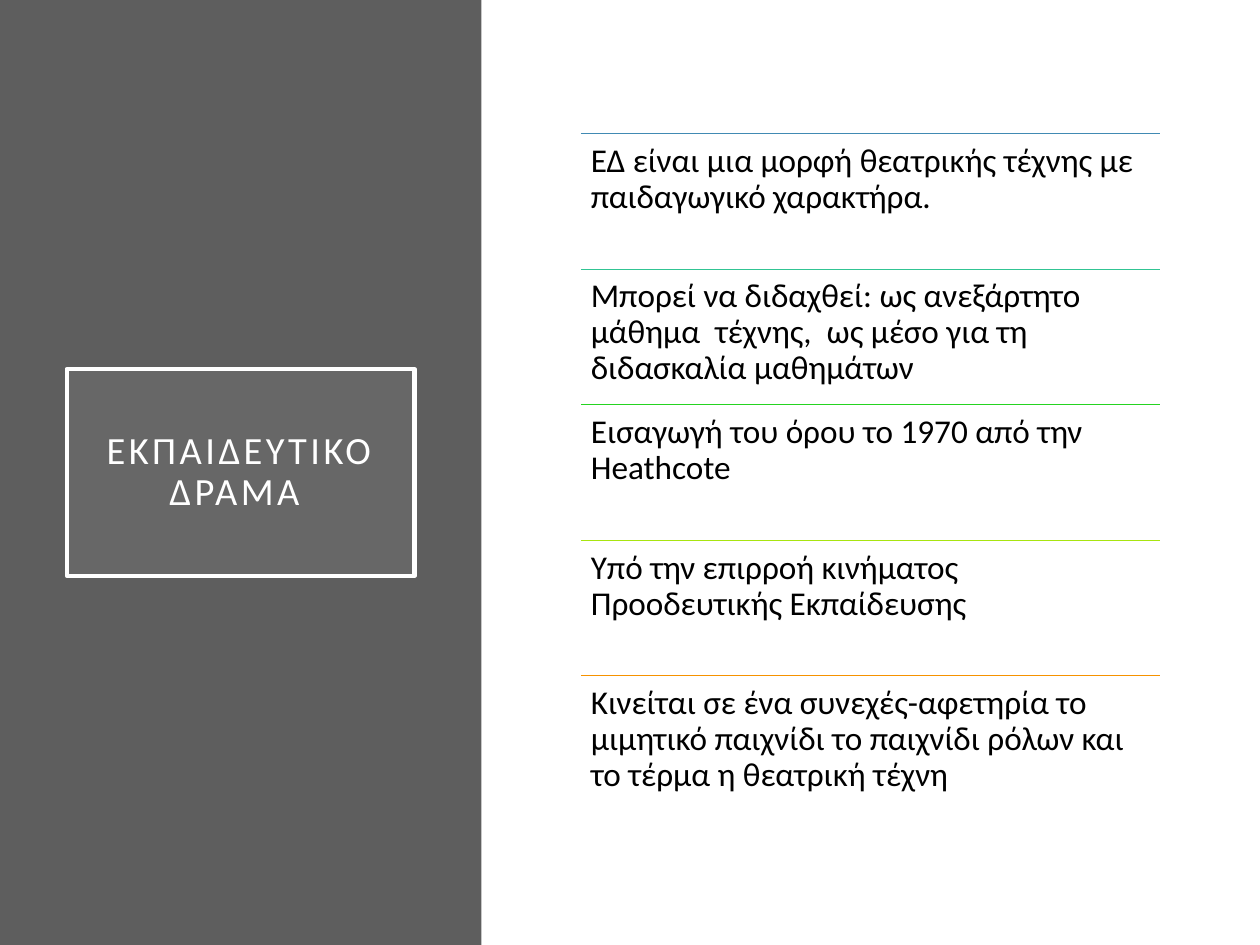
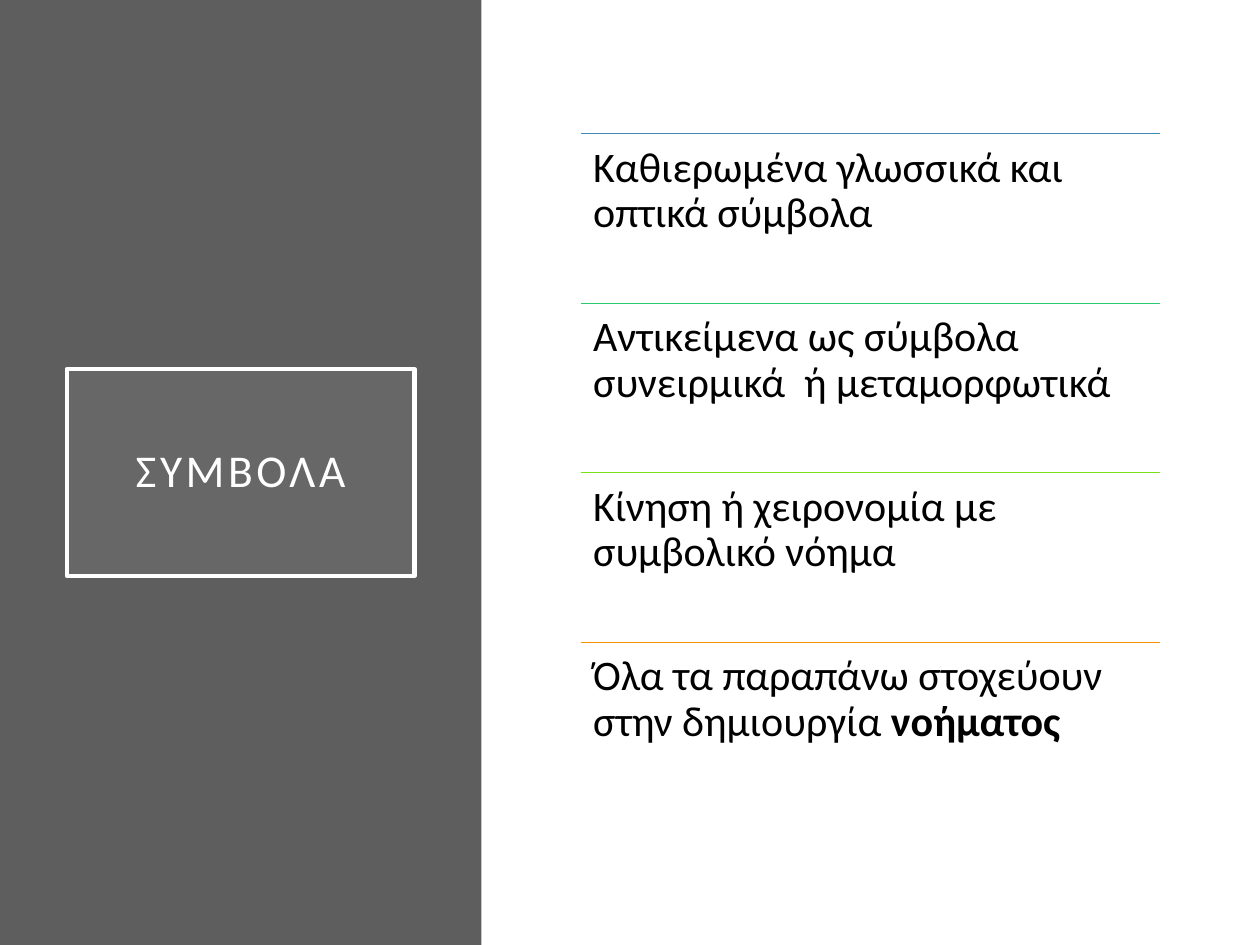
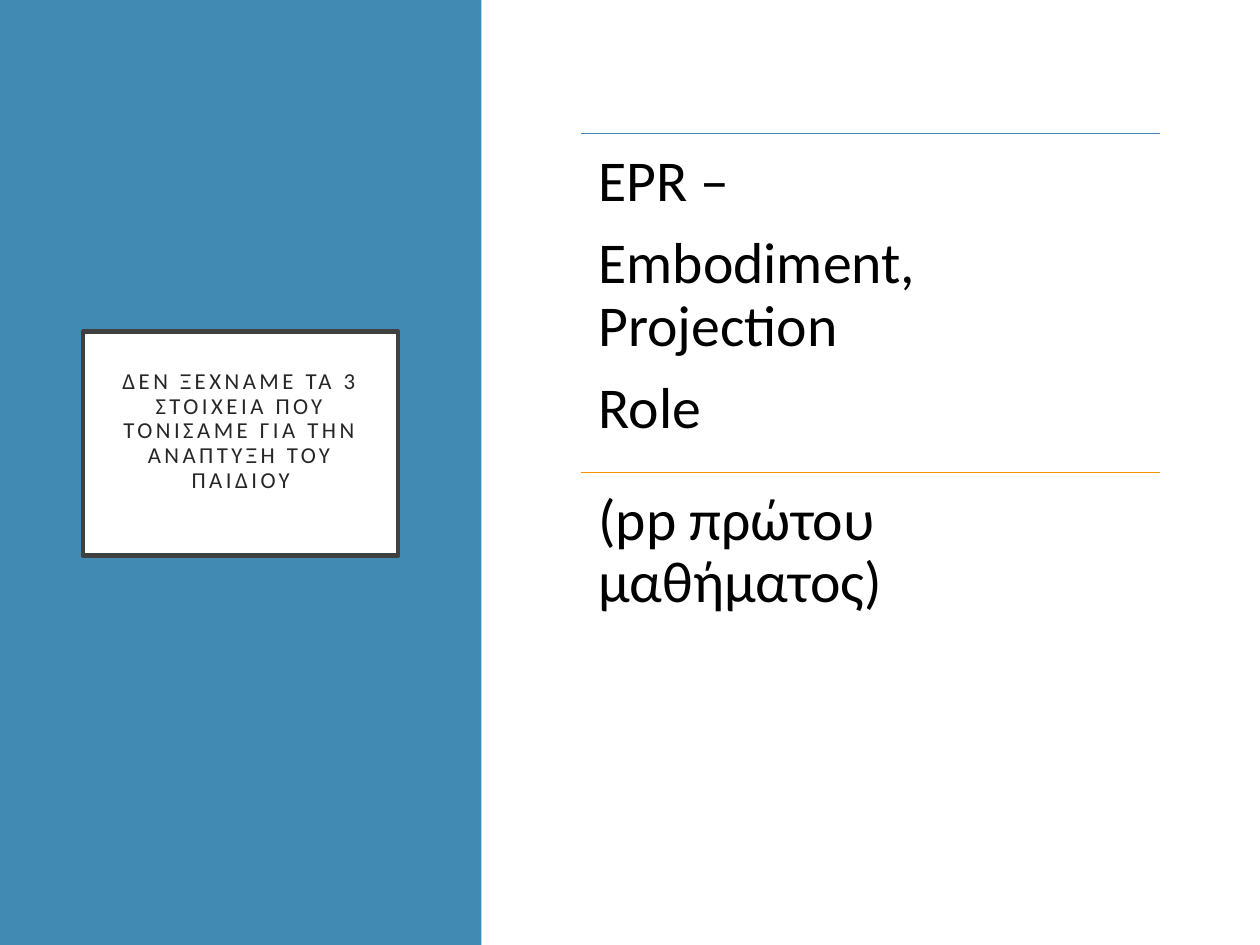
"""Build three slides that pair a framed title on a side band with ruled rows of text."""
from dataclasses import dataclass
from typing import Any

from lxml import etree
from pptx import Presentation
from pptx.dml.color import RGBColor
from pptx.enum.shapes import MSO_CONNECTOR, MSO_SHAPE
from pptx.enum.text import MSO_ANCHOR, MSO_AUTO_SIZE, PP_ALIGN
from pptx.oxml.ns import qn
from pptx.util import Emu, Pt

RECTANGLE = MSO_SHAPE.RECTANGLE
STRAIGHT = MSO_CONNECTOR.STRAIGHT
TOP = MSO_ANCHOR.TOP
MIDDLE = MSO_ANCHOR.MIDDLE
NO_AUTOFIT = MSO_AUTO_SIZE.NONE
LEFT = PP_ALIGN.LEFT
CENTER = PP_ALIGN.CENTER

EMU_PER_PX = 9144
SLIDE_WIDTH, SLIDE_HEIGHT = 1000, 750
BAND_WIDTH = 382
ROWS_LEFT, ROWS_TOP, ROWS_WIDTH, ROWS_HEIGHT = 461, 106, 460, 538
TITLE_ONLY_LAYOUT = 5


@dataclass(frozen=True)
class Theme:
    """Hold the colours, type sizes and line settings of the deck."""

    font: str = "Calibri"
    white: str = "FFFFFF"
    black: str = "000000"
    band: str = "5E5E5E"
    frame_tint: str = "9E9E9E"
    frame_dark: str = "404040"
    title_dark: str = "262626"
    blue: str = "418AB3"
    teal: str = "31C493"
    mint: str = "2BC970"
    green: str = "25D421"
    grass: str = "78E016"
    lime: str = "A8E510"
    orange: str = "F69200"
    title_long: int = 22
    title_short: int = 26
    title_small: int = 13
    row_small: int = 19
    row_medium: int = 24
    row_large: int = 33
    frame_line: float = 2.5
    rule_line: float = 0.5
    line_spacing: float = 0.9
    space_after: float = 0.35
    tracking: int = 200


THEME = Theme()


@dataclass(frozen=True)
class Box:
    """Give a place and size in px."""

    left: int
    top: int
    width: int
    height: int

    def emu(self) -> tuple[Emu, ...]:
        """Return the box lengths in EMU."""
        return tuple(map(px, (self.left, self.top, self.width, self.height)))


@dataclass(frozen=True)
class TitleStyle:
    """Describe the title frame and its lettering."""

    box: Box
    insets: tuple[int, int, int, int]
    fill: str
    opacity: int
    line: str
    color: str


@dataclass(frozen=True)
class Row:
    """Describe one ruled row of text, with an optional bold ending."""

    accent: str
    paragraphs: tuple[str, ...]
    bold_ending: str = ""


@dataclass(frozen=True)
class Page:
    """Describe one slide."""

    title: str
    title_size: int
    title_style: TitleStyle
    background: str
    panel: Box
    panel_color: str
    row_size: int
    row_inset: int
    rows: tuple[Row, ...]


ON_GREY = TitleStyle(Box(53, 293, 276, 164), (20, 20, 20, 20),
                     THEME.frame_tint, 15, THEME.white, THEME.white)
ON_BLUE = TitleStyle(Box(66, 263, 250, 178), (30, 20, 30, 39),
                     THEME.white, 100, THEME.frame_dark, THEME.title_dark)
SIDE_BAND = Box(0, 0, BAND_WIDTH, SLIDE_HEIGHT)
CONTENT_PANEL = Box(BAND_WIDTH, 0, SLIDE_WIDTH - BAND_WIDTH, SLIDE_HEIGHT)

PAGES = (
    Page(
        "Εκπαιδευτικο Δραμα ", THEME.title_long, ON_GREY,
        THEME.white, SIDE_BAND, THEME.band, THEME.row_small, 8,
        (
            Row(THEME.blue, ("ΕΔ είναι μια μορφή θεατρικής τέχνης με παιδαγωγικό χαρακτήρα.",)),
            Row(THEME.teal, ("Μπορεί να διδαχθεί: ως ανεξάρτητο μάθημα  τέχνης,  "
                             "ως μέσο για τη διδασκαλία μαθημάτων",)),
            Row(THEME.green, ("Εισαγωγή του όρου το 1970 από την Heathcote",)),
            Row(THEME.lime, ("Υπό την επιρροή κινήματος Προοδευτικής Εκπαίδευσης",)),
            Row(THEME.orange, ("Κινείται σε ένα συνεχές-αφετηρία το μιμητικό παιχνίδι "
                               "το παιχνίδι ρόλων και το τέρμα η θεατρική τέχνη",)),
        ),
    ),
    Page(
        "Σύμβολα", THEME.title_short, ON_GREY,
        THEME.white, SIDE_BAND, THEME.band, THEME.row_medium, 10,
        (
            Row(THEME.blue, ("Καθιερωμένα γλωσσικά και οπτικά σύμβολα",)),
            Row(THEME.mint, ("Αντικείμενα ως σύμβολα συνειρμικά  ή μεταμορφωτικά",)),
            Row(THEME.grass, ("Κίνηση ή χειρονομία με συμβολικό νόημα",)),
            Row(THEME.orange, ("Όλα τα παραπάνω στοχεύουν στην δημιουργία ",), "νοήματος"),
        ),
    ),
    Page(
        "Δεν ξεχνάμε τα 3 στοιχεία που τονίσαμε για την ανάπτυξη του παιδιού",
        THEME.title_small, ON_BLUE,
        THEME.blue, CONTENT_PANEL, THEME.white, THEME.row_large, 14,
        (
            Row(THEME.blue, ("EPR –", "Embodiment, Projection", "Role")),
            Row(THEME.orange, ("(pp πρώτου μαθήματος)",)),
        ),
    ),
)


def px(length: float) -> Emu:
    """Turn px into EMU."""
    return Emu(round(length * EMU_PER_PX))


def apply_format(target: Any, values: dict[str, Any]) -> None:
    """Set each named attribute on the target."""
    for name, value in values.items():
        setattr(target, name, value)


def paint(fill: Any, color: str) -> None:
    """Give a fill one solid colour."""
    fill.solid()
    fill.fore_color.rgb = RGBColor.from_string(color)


def draw_line(line: Any, color: str, width: float) -> None:
    """Set the colour and width of a line."""
    paint(line.fill, color)
    line.width = Pt(width)


def format_frame(frame: Any, insets: tuple[int, int, int, int], anchor: Any) -> None:
    """Set wrapping, anchoring and insets of a text frame."""
    sides = ("margin_left", "margin_top", "margin_right", "margin_bottom")
    apply_format(frame, {
        "word_wrap": True, "auto_size": NO_AUTOFIT, "vertical_anchor": anchor,
        **dict(zip(sides, map(px, insets))),
    })


def add_run(paragraph: Any, text: str, size: int, color: str, bold: bool = False) -> Any:
    """Add a formatted run to a paragraph."""
    run = paragraph.add_run()
    run.text = text
    apply_format(run.font, {"name": THEME.font, "size": Pt(size), "bold": bold})
    run.font.color.rgb = RGBColor.from_string(color)
    return run


def add_panel(slide: Any, page: Page) -> None:
    """Paint the background and place the panel behind the title."""
    paint(slide.background.fill, page.background)
    panel = slide.shapes.add_shape(RECTANGLE, *page.panel.emu())
    panel.shadow.inherit = False
    paint(panel.fill, page.panel_color)
    panel.line.fill.background()
    slide.shapes.title.element.addprevious(panel.element)


def set_title(slide: Any, page: Page) -> None:
    """Place and format the framed title in spaced capitals."""
    style = page.title_style
    title = slide.shapes.title
    apply_format(title, dict(zip(("left", "top", "width", "height"), style.box.emu())))
    paint(title.fill, style.fill)
    if style.opacity < 100:
        color = title.element.spPr.find(qn("a:solidFill"))[0]
        etree.SubElement(color, qn("a:alpha"), val=str(style.opacity * 1000))
    draw_line(title.line, style.line, THEME.frame_line)
    format_frame(title.text_frame, style.insets, MIDDLE)
    paragraph = title.text_frame.paragraphs[0]
    apply_format(paragraph, {"alignment": CENTER, "line_spacing": THEME.line_spacing})
    run = add_run(paragraph, page.title, page.title_size, style.color)
    properties = run.font._element
    for name, value in {"cap": "all", "spc": str(THEME.tracking)}.items():
        properties.set(name, value)


def add_row(shapes: Any, row: Row, top: float, height: float, size: int, inset: int) -> None:
    """Draw a rule with its text below."""
    left, right, y = px(ROWS_LEFT), px(ROWS_LEFT + ROWS_WIDTH), px(top)
    rule = shapes.add_connector(STRAIGHT, left, y, right, y)
    draw_line(rule.line, row.accent, THEME.rule_line)
    etree.SubElement(rule.element.spPr, qn("a:effectLst"))

    frame = shapes.add_textbox(left, y, px(ROWS_WIDTH), px(height)).text_frame
    format_frame(frame, (inset,) * 4, TOP)
    for index, text in enumerate(row.paragraphs):
        paragraph = frame.add_paragraph() if index else frame.paragraphs[0]
        apply_format(paragraph, {
            "alignment": LEFT, "line_spacing": THEME.line_spacing,
            "space_after": Pt(size * THEME.space_after),
        })
        add_run(paragraph, text, size, THEME.black)
    if row.bold_ending:
        add_run(paragraph, row.bold_ending, size, THEME.black, bold=True)


def add_rows(slide: Any, page: Page) -> None:
    """Share the content height equally between the rows."""
    group = slide.shapes.add_group_shape()
    height = ROWS_HEIGHT / len(page.rows)
    for index, row in enumerate(page.rows):
        add_row(group.shapes, row, ROWS_TOP + index * height, height,
                page.row_size, page.row_inset)


def main() -> None:
    """Build and save the presentation."""
    presentation = Presentation()
    apply_format(presentation, {"slide_width": px(SLIDE_WIDTH), "slide_height": px(SLIDE_HEIGHT)})
    for page in PAGES:
        slide = presentation.slides.add_slide(presentation.slide_layouts[TITLE_ONLY_LAYOUT])
        add_panel(slide, page)
        set_title(slide, page)
        add_rows(slide, page)
    presentation.save("out.pptx")


if __name__ == "__main__":
    main()
